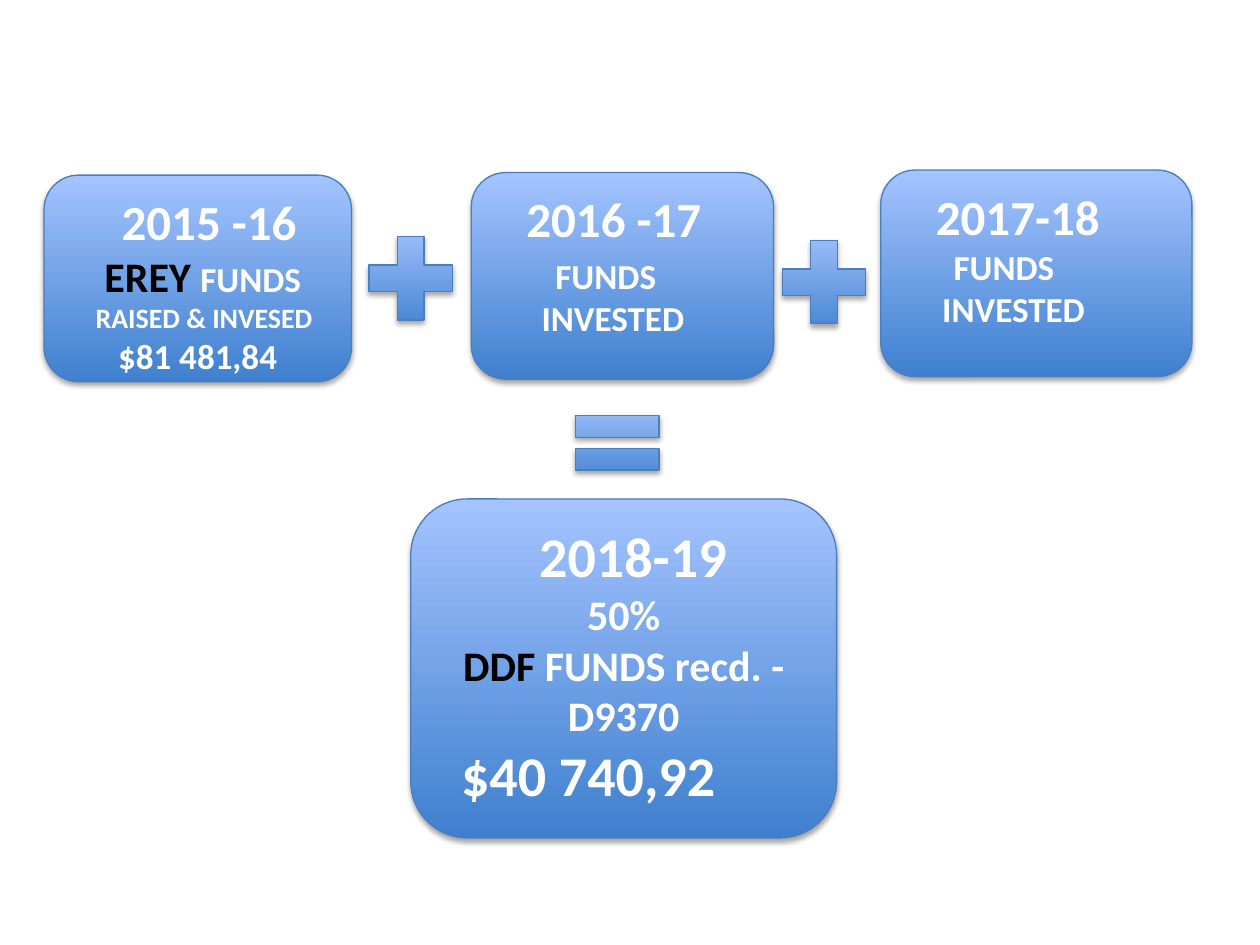
import pptx
import pptx.dml.color
import pptx.enum.shapes
import pptx.enum.text
import pptx.oxml
import pptx.oxml.ns
import pptx.util

Inches = pptx.util.Inches
Pt = pptx.util.Pt
SHAPE = pptx.enum.shapes.MSO_SHAPE
ALIGN = pptx.enum.text.PP_ALIGN


class FundsSlide:
    """Draws gradient boxes and operators in one shared style."""

    COLORS = {"deep": "3F80CE", "pale": "A4C4FF", "edge": "4B7EBC",
              "white": "FFFFFF", "black": "000000"}
    FRAME = {"word_wrap": True, "vertical_anchor": pptx.enum.text.MSO_ANCHOR.TOP}
    FONT = {"name": "Calibri", "bold": True}

    def __init__(self, slide):
        self.slide = slide

    def color(self, key):
        return pptx.dml.color.RGBColor.from_string(self.COLORS[key])

    def apply(self, target, values):
        for attribute, value in values.items():
            setattr(target, attribute, value)

    def figure(self, preset, left, top, width, height):
        figure = self.slide.shapes.add_shape(
            preset, Inches(left), Inches(top), Inches(width), Inches(height))
        figure.fill.gradient()
        figure.fill.gradient_angle = 90
        for stop, key in zip(figure.fill.gradient_stops, ("deep", "pale")):
            stop.color.rgb = self.color(key)
        figure.line.color.rgb = self.color("edge")
        figure.line.width = Pt(0.75)
        self.shade(figure)
        return figure

    def shade(self, figure):
        figure.shadow.inherit = False
        effects = figure._element.spPr.find(pptx.oxml.ns.qn("a:effectLst"))
        effects.append(pptx.oxml.parse_xml(
            f'<a:outerShdw {pptx.oxml.ns.nsdecls("a")} blurRad="{Pt(3.1)}" '
            f'dist="{Pt(1.8)}" dir="5400000" rotWithShape="0">'
            f'<a:srgbClr val="{self.COLORS["black"]}"><a:alpha val="35000"/>'
            '</a:srgbClr></a:outerShdw>'))

    def box(self, place, lines):
        frame = self.figure(SHAPE.ROUNDED_RECTANGLE, *place).text_frame
        self.apply(frame, self.FRAME)
        for number, (align, indent, before, runs) in enumerate(lines):
            paragraph = frame.add_paragraph() if number else frame.paragraphs[0]
            paragraph.alignment = align
            if before:
                paragraph.space_before = Pt(before)
            paragraph._p.get_or_add_pPr().set("marL", str(Inches(indent)))
            for words, size, key in runs:
                run = paragraph.add_run()
                run.text = words
                self.apply(run.font, {**self.FONT, "size": Pt(size)})
                run.font.color.rgb = self.color(key)


def main():
    deck = pptx.Presentation()
    deck.slide_width, deck.slide_height = Inches(10), Inches(7.5)
    funds = FundsSlide(deck.slides.add_slide(deck.slide_layouts[6]))

    funds.box((0.35, 1.39, 2.44, 1.64), [
        (ALIGN.CENTER, 0.18, 0, [("2015 -16", 28, "white")]),
        (ALIGN.CENTER, 0.08, 0, [("EREY ", 24, "black"), ("FUNDS", 20, "white")]),
        (ALIGN.CENTER, 0.1, 0, [("RAISED & INVESED", 16, "white")]),
        (ALIGN.CENTER, 0, 0, [("$81 481,84", 20, "white")]),
    ])
    invested_years = [
        ((6.99, 1.35, 2.47, 1.64), "2017-18", 0.4, 0.31, 0),
        ((3.74, 1.37, 2.4, 1.64), "2016 -17", 0.49, 0.38, 4),
    ]
    for place, year, funds_indent, invested_indent, gap in invested_years:
        funds.box(place, [
            (ALIGN.LEFT, 0.26, 0, [(year, 28, "white")]),
            (ALIGN.LEFT, funds_indent, gap, [("FUNDS", 20, "white")]),
            (ALIGN.LEFT, invested_indent, 0, [("INVESTED", 20, "white")]),
        ])
    funds.box((3.26, 3.96, 3.38, 2.69), [
        (ALIGN.LEFT, 0.79, 0, [("2018-19", 32, "white")]),
        (ALIGN.CENTER, 0, 0, [("50%", 24, "white")]),
        (ALIGN.CENTER, 0, 0, [("DDF", 24, "black"),
                              (" FUNDS recd. - D9370", 24, "white")]),
        (ALIGN.LEFT, 0.17, 0, [("$40 740,92", 32, "white")]),
    ])

    for left, top in ((6.09, 1.79), (2.81, 1.76)):
        funds.figure(SHAPE.MATH_PLUS, left, top, 0.9, 0.9)
    funds.figure(SHAPE.MATH_EQUAL, 4.45, 3.15, 0.9, 0.73)

    deck.save("out.pptx")


if __name__ == "__main__":
    main()
